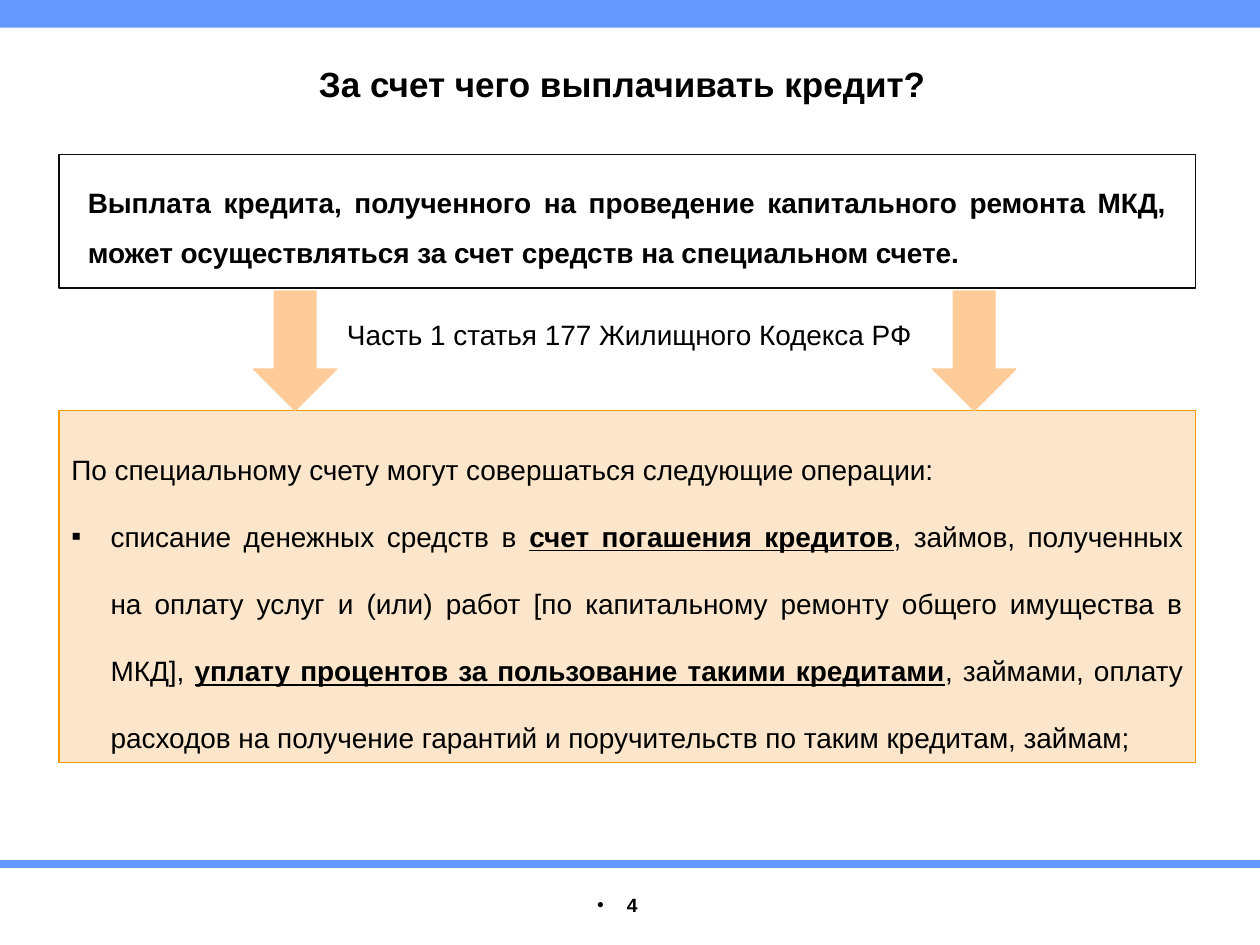
from lxml import etree
from pptx import Presentation
from pptx.dml.color import RGBColor
from pptx.enum import shapes, text
from pptx.oxml import ns
from pptx.util import Cm, Pt

BLUE = RGBColor(0x66, 0x99, 0xFF)
WHITE = RGBColor(0xFF, 0xFF, 0xFF)
BLACK = RGBColor(0, 0, 0)
INK = RGBColor(0x0D, 0x0D, 0x0D)
CREAM = RGBColor(0xFB, 0xE6, 0xCB)
AMBER = RGBColor(0xFF, 0x99, 0x00)
PEACH = RGBColor(0xFF, 0xCC, 0x99)

WIDE, HIGH = 25.4, 19.05
LEFT, SPAN = 1.19, 22.91
MID, JUST = text.PP_ALIGN.CENTER, text.PP_ALIGN.JUSTIFY
KIND = shapes.MSO_SHAPE

# Content: a paragraph is a list of (words, stressed) runs
TITLE = [("За счет чего выплачивать кредит? ", False)]
CLAIM = [("Выплата кредита, полученного на проведение капитального ремонта МКД, "
          "может осуществляться за счет средств на специальном счете. ", False)]
NOTE = [("Часть 1 статья 177 Жилищного Кодекса РФ", False)]
LEAD = [("По специальному счету могут совершаться следующие операции:", False)]
ITEM = [
    ("списание денежных средств в ", False),
    ("счет погашения кредитов", True),
    (", займов, полученных на оплату услуг и (или) работ "
     "[по капитальному ремонту общего имущества в МКД], ", False),
    ("уплату процентов за пользование такими кредитами", True),
    (", займами, оплату расходов на получение гарантий и поручительств "
     "по таким кредитам, займам;", False),
]
PAGE = [("4", False)]

# Text boxes: place in cm, runs, font, paragraph format
BOXES = [
    ((LEFT, 1.14, SPAN, 1.12), TITLE, dict(size=Pt(20), bold=True), dict(alignment=MID)),
    ((1.52, 3.28, 22.25, 2.31), CLAIM, dict(size=Pt(16), bold=True),
     dict(alignment=JUST, line_spacing=1.5)),
    ((6.53, 6.27, 12.32, 0.94), NOTE, dict(size=Pt(16)),
     dict(alignment=MID, space_after=Pt(6))),
]


def put(obj, vals):
    for key, val in vals.items():
        setattr(obj, key, val)


def block(kind, box, fill, line=None):
    part = slide.shapes.add_shape(kind, *map(Cm, box))
    part.shadow.inherit = False
    part.fill.solid()
    part.fill.fore_color.rgb = fill
    if line is None:
        part.line.fill.background()
    else:
        part.line.color.rgb = line
        part.line.width = Pt(0.75)
    return part


def write(para, runs, font, form, mark=None, hang=0):
    put(para, form)
    if mark:
        props = para._p.get_or_add_pPr()
        props.set("marL", str(Cm(hang)))
        props.set("indent", str(-Cm(hang)))
        face = etree.SubElement(props, ns.qn("a:buFont"))
        face.set("typeface", "Arial")
        etree.SubElement(props, ns.qn("a:buChar")).set("char", mark)
    for words, stress in runs:
        run = para.add_run()
        run.text = words
        put(run.font, dict(name="Arial", **font))
        run.font.color.rgb = BLACK
        if stress:
            put(run.font, dict(bold=True, underline=True))


def label(box):
    frame = slide.shapes.add_textbox(*map(Cm, box)).text_frame
    frame.word_wrap = True
    return frame


deck = Presentation()
deck.slide_width, deck.slide_height = Cm(WIDE), Cm(HIGH)
slide = deck.slides.add_slide(deck.slide_layouts[6])

# Top band and bottom rule
block(KIND.RECTANGLE, (0, 0, WIDE, 0.56), BLUE)
rule = slide.shapes.add_connector(shapes.MSO_CONNECTOR.STRAIGHT,
                                  0, Cm(17.42), Cm(WIDE), Cm(17.42))
rule.line.color.rgb = BLUE
rule.line.width = Pt(4.5)
etree.SubElement(rule._element.spPr, ns.qn("a:effectLst"))

# Claim frame and the box of operations
block(KIND.RECTANGLE, (LEFT, 3.12, SPAN, 2.69), WHITE, INK)
body = block(KIND.RECTANGLE, (LEFT, 8.28, SPAN, 7.09), CREAM, AMBER).text_frame
put(body, dict(word_wrap=True, vertical_anchor=text.MSO_ANCHOR.MIDDLE))
form = dict(alignment=JUST, line_spacing=2.0)
write(body.paragraphs[0], LEAD, dict(size=Pt(16)), form)
write(body.add_paragraph(), ITEM, dict(size=Pt(16)), form, "▪", 0.79)

# Title, claim and note
for box, runs, font, form in BOXES:
    write(label(box).paragraphs[0], runs, font, form)

# Arrows from the claim to the operations
for left in (5.11, 18.8):
    block(KIND.DOWN_ARROW, (left, 5.87, 1.68, 2.41), PEACH, PEACH)

# Page number
foot = label((10.08, 17.88, 5.23, 0.79))
put(foot, dict(margin_left=0, margin_right=Cm(0.5)))
write(foot.paragraphs[0], PAGE, dict(size=Pt(11), bold=True),
      dict(alignment=MID), "•", 0.6)

deck.save("out.pptx")
